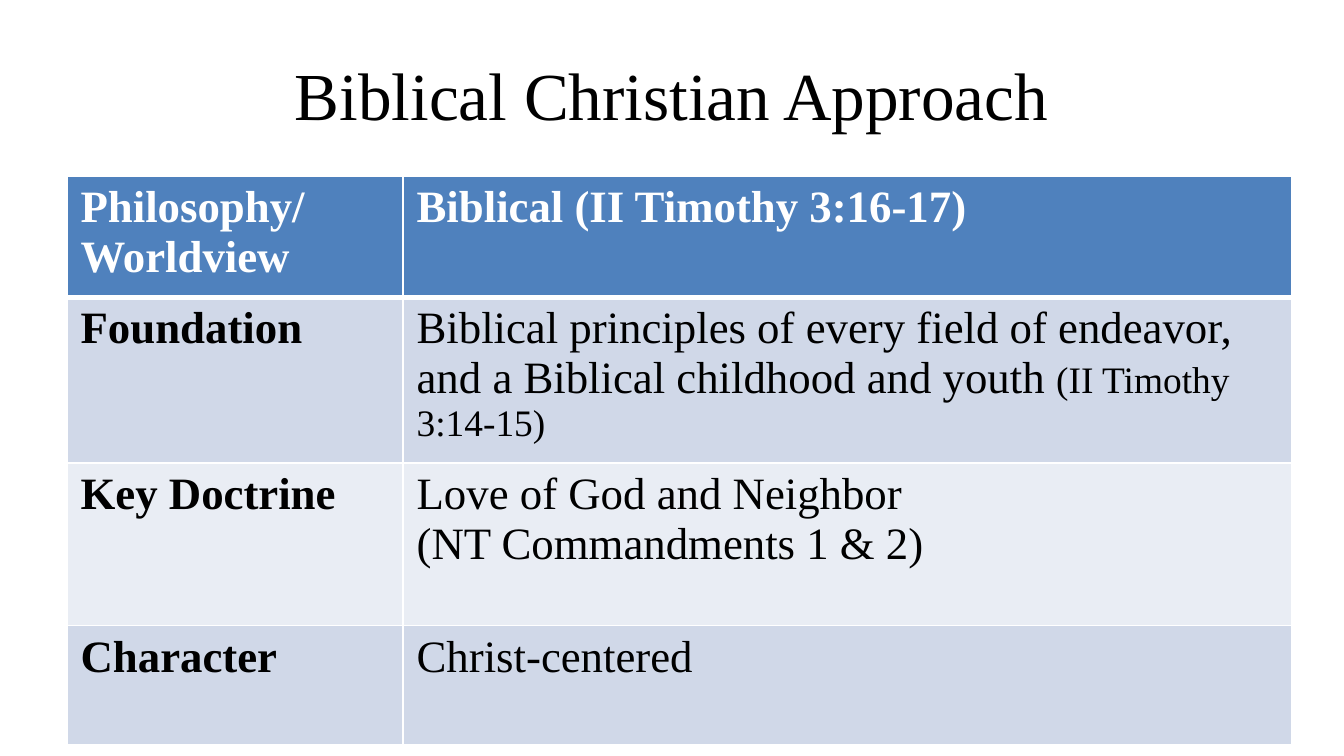
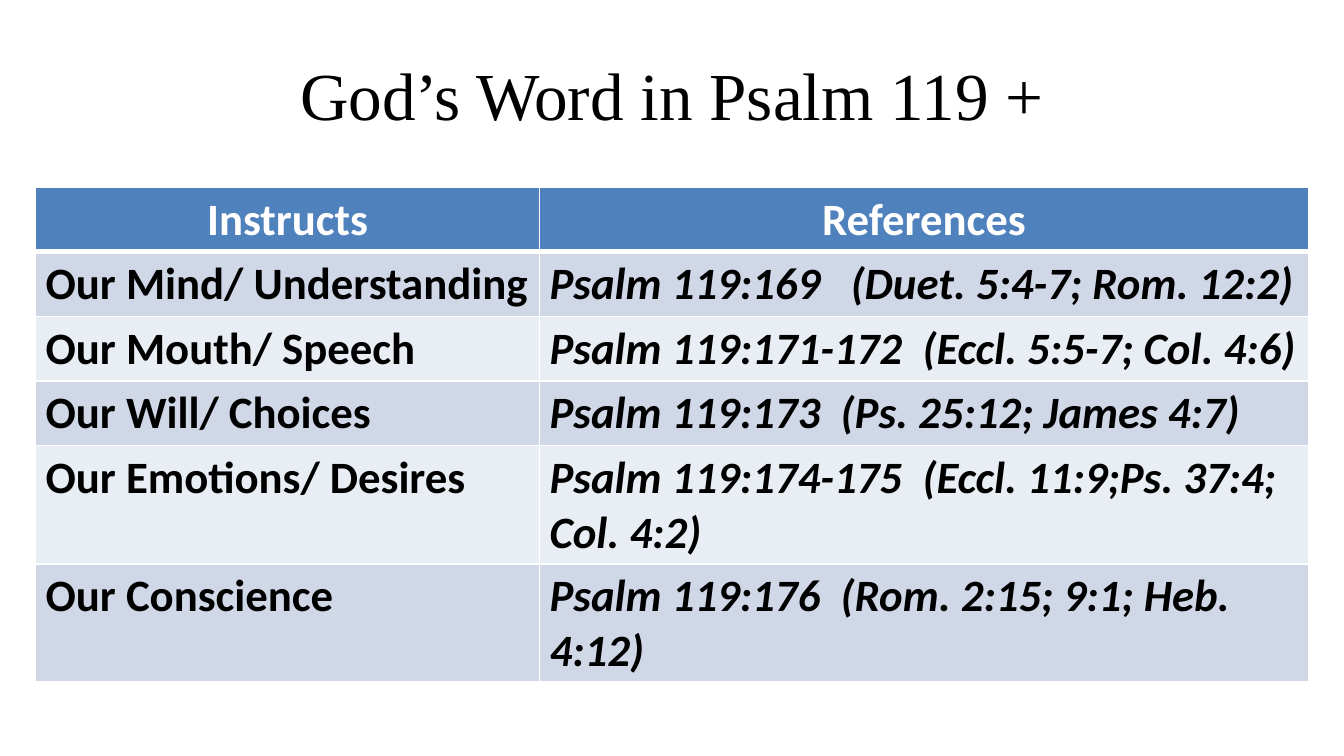
from lxml import etree
from pptx import Presentation
from pptx import util as u
from pptx.dml.color import RGBColor
from pptx.enum import text
from pptx.oxml.ns import qn

PX = 4572  # 200 px to the inch
COLORS = {"white": "FFFFFF", "ink": "000000", "header": "4F81BD",
          "odd": "D0D8E8", "even": "E9EDF4"}
SERIF, SANS = "Times New Roman", "Calibri"


def write(p, words, font=SERIF, size=24, color="ink", bold=False,
          italic=False, spacing=0):
    """Add a run; spacing is extra points after each character."""
    r = p.add_run()
    r.text = words
    r.font.name, r.font.size = font, u.Pt(size)
    r.font.bold, r.font.italic = bold, italic
    r.font.color.rgb = RGBColor.from_string(COLORS[color])
    if spacing:
        r._r.get_or_add_rPr().set("spc", str(round(spacing * 100)))


def add_grid(s, left, top, height, col_widths, row_heights, margins):
    """Add a banded table with white rules and return it."""
    frame = s.shapes.add_table(len(row_heights), len(col_widths), left * PX,
                               top * PX, sum(col_widths) * PX, height * PX)
    tbl = frame.table
    for col, width in zip(tbl.columns, col_widths):
        col.width = width * PX
    for i, (row, row_height) in enumerate(zip(tbl.rows, row_heights)):
        row.height = row_height * PX
        fill = "header" if i == 0 else "odd" if i % 2 else "even"
        for cell in row.cells:
            cell.margin_left = cell.margin_right = margins[0] * PX
            cell.margin_top = cell.margin_bottom = margins[1] * PX
            cell.fill.solid()
            cell.fill.fore_color.rgb = RGBColor.from_string(COLORS[fill])
            tc_pr = cell._tc.get_or_add_tcPr()
            for n, side in enumerate("LRTB"):
                thick = (i, side) in ((0, "B"), (1, "T"))
                ln = etree.Element(qn(f"a:ln{side}"), w=str(u.Pt(3 if thick else 1)))
                solid = etree.SubElement(ln, qn("a:solidFill"))
                etree.SubElement(solid, qn("a:srgbClr"), val=COLORS["white"])
                tc_pr.insert(n, ln)
    frame.height = height * PX  # setting the rows has changed it
    return tbl


prs = Presentation()
prs.slide_width, prs.slide_height = 2000 * PX, 1125 * PX

slides = []
for title in ("Biblical Christian Approach", "God’s Word in Psalm 119 +"):
    s = prs.slides.add_slide(prs.slide_layouts[6])
    tf = s.shapes.add_textbox(100 * PX, 45 * PX, 1800 * PX, 188 * PX).text_frame
    tf.word_wrap = True
    tf.vertical_anchor = text.MSO_ANCHOR.MIDDLE
    tf.paragraphs[0].alignment = text.PP_ALIGN.CENTER
    write(tf.paragraphs[0], title, size=36)
    slides.append(s)

# Slide 1: each answer is a list of paragraphs
approach = [
    ("Philosophy/ Worldview", ["Biblical (II Timothy 3:16-17)"]),
    ("Foundation", ["Biblical principles of every field of endeavor, "
                    "and a Biblical childhood and youth "]),
    ("Key Doctrine", ["Love of God and Neighbor", "(NT Commandments 1 & 2)"]),
    ("Character", ["Christ-centered"]),
]
tbl = add_grid(slides[0], 100, 262, 798, (500, 1322), (177, 177, 242, 177), (20, 10))
for i, (topic, answers) in enumerate(approach):
    color = "ink" if i else "white"
    write(tbl.cell(i, 0).text_frame.paragraphs[0], topic, color=color, bold=True)
    tf = tbl.cell(i, 1).text_frame
    for j, answer in enumerate(answers):
        p = tf.add_paragraph() if j else tf.paragraphs[0]
        write(p, answer, color=color, bold=i == 0)
write(tbl.cell(1, 1).text_frame.paragraphs[0], "(II Timothy 3:14-15)", size=20)

# Slide 2: psalm verse, cross references and the extra gap between them
instructs = [
    ("Our Mind/ Understanding", "Psalm 119:169", "(Duet. 5:4-7; Rom. 12:2)", 10.8),
    ("Our Mouth/ Speech", "Psalm 119:171-172", "(Eccl. 5:5-7; Col. 4:6)", 5.4),
    ("Our Will/ Choices", "Psalm 119:173", "(Ps. 25:12; James 4:7)", 5.4),
    ("Our Emotions/ Desires", "Psalm 119:174-175",
     "(Eccl. 11:9;Ps. 37:4; Col. 4:2)", 5.4),
    ("Our Conscience", "Psalm 119:176", "(Rom. 2:15; 9:1; Heb. 4:12)", 5.4),
]
tbl = add_grid(slides[1], 53, 279, 730, (750, 1144), [60] + [82] * 5, (15, 8))
for j, heading in enumerate(("Instructs", "References")):
    p = tbl.cell(0, j).text_frame.paragraphs[0]
    p.alignment = text.PP_ALIGN.CENTER
    write(p, heading, font=SANS, color="white", bold=True)
for i, (faculty, verse, others, gap) in enumerate(instructs, 1):
    write(tbl.cell(i, 0).text_frame.paragraphs[0], faculty, font=SANS, bold=True)
    p = tbl.cell(i, 1).text_frame.paragraphs[0]
    for words, spacing in ((verse, 0), (" ", gap), (others, 0)):
        write(p, words, font=SANS, bold=True, italic=True, spacing=spacing)

prs.save("out.pptx")
